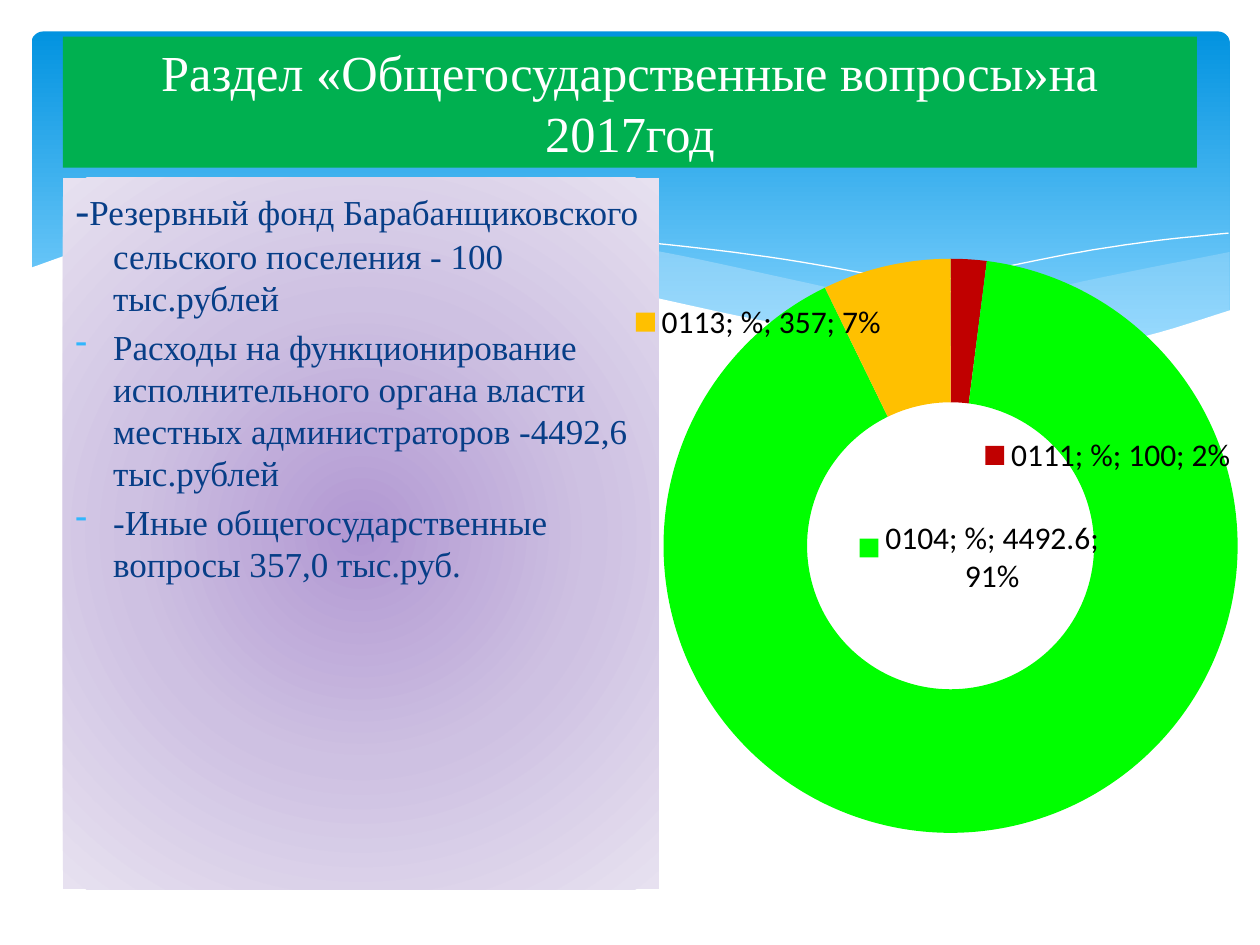
import pptx
import pptx.chart.data
import pptx.dml.color
import pptx.enum.chart
import pptx.enum.shapes
import pptx.enum.text
import pptx.oxml
import pptx.oxml.ns
import pptx.util
from pptx.util import Inches

COLORS = {
    "sky": "0293E0", "pale_sky": "83D3FE", "wave": "C6E7FC", "white": "FFFFFF",
    "purple": "B197D2", "lilac": "CEC1E2", "mist": "E7E1F0",
    "green": "00B050", "navy": "073E87", "bullet": "31B6FD", "black": "000000",
    "red": "C00000", "lime": "00FF00", "amber": "FFC000",
}
color = {name: pptx.dml.color.RGBColor.from_string(value) for name, value in COLORS.items()}
drawing_ns = pptx.oxml.ns.nsdecls("a")
chart_ns = pptx.oxml.ns.nsdecls("c")


def add_text(paragraph, text, size=20, fill="navy", font="Times New Roman"):
    run = paragraph.add_run()
    run.text = text
    run.font.size = pptx.util.Pt(size)
    run.font.name = font
    run.font.color.rgb = color[fill]


def smooth_curve(knots, steps=8):
    padded = [knots[0], *knots, knots[-1]]
    points = [knots[0]]
    for before, start, end, after in zip(padded, padded[1:], padded[2:], padded[3:]):
        for step in range(1, steps + 1):
            t = step / steps
            points.append(tuple(
                0.5 * (2 * b + (c - a) * t + (2 * a - 5 * b + 4 * c - d) * t ** 2
                       + (3 * b - a - 3 * c + d) * t ** 3)
                for a, b, c, d in zip(before, start, end, after)))
    return points


presentation = pptx.Presentation()
presentation.slide_width = Inches(10)
presentation.slide_height = Inches(7.5)
slide = presentation.slides.add_slide(presentation.slide_layouts[6])
shape_type = pptx.enum.shapes.MSO_SHAPE

header = slide.shapes.add_shape(
    shape_type.ROUNDED_RECTANGLE, Inches(0.25), Inches(0.25), Inches(9.51), Inches(2.7))
header.adjustments[0] = 0.034

right_wave = (
    smooth_curve([(9.76, 2), (8.61, 2.23), (7.53, 2.48), (6.61, 2.65)])
    + smooth_curve([(6.61, 2.65), (7.32, 2.74), (8.14, 2.78), (8.97, 2.7), (9.76, 2.47)]))
middle_wave = (
    smooth_curve([(8.93, 2.73), (7.75, 2.54), (6.29, 2.22), (5.14, 1.98), (4.2, 1.87),
                  (3.61, 1.85), (2.86, 1.91)])
    + smooth_curve([(2.86, 1.91), (3.62, 2.03), (4.49, 2.22), (5.66, 2.48), (6.65, 2.66),
                    (7.61, 2.77), (8.28, 2.78), (8.93, 2.73)]))
long_line = smooth_curve([(3.09, 1.95), (3.74, 1.88), (4.5, 1.88), (5.56, 1.97),
                          (6.65, 2.13), (7.95, 2.41), (9.07, 2.72)])
short_line = smooth_curve([(6.13, 2.57), (7.2, 2.29), (8.36, 2.04), (9.1, 1.92), (9.75, 1.85)])
white_wave = (
    smooth_curve([(0.23, 2.13), (0.95, 1.91), (1.93, 1.84), (2.92, 1.9), (4.47, 2.2),
                  (6.03, 2.54), (7.26, 2.72), (8.23, 2.77), (8.99, 2.69), (9.77, 2.46)])
    + [(9.77, 3.29), (0.23, 3.29)])

units_per_inch = 1000
for points, fill, opacity in [
        (right_wave, "wave", 29), (middle_wave, "wave", 40),
        (long_line, None, 100), (short_line, None, 100), (white_wave, "white", 100)]:
    scaled = [(round(x * units_per_inch), round(y * units_per_inch)) for x, y in points]
    builder = slide.shapes.build_freeform(*scaled[0], scale=Inches(1) / units_per_inch)
    builder.add_line_segments(scaled[1:], close=fill is not None)
    wave = builder.convert_to_shape()
    wave.shadow.inherit = False
    if fill is None:
        wave.fill.background()
        wave.line.color.rgb = color["white"]
        wave.line.width = pptx.util.Pt(0)
    else:
        wave.line.fill.background()
        wave.fill.solid()
        wave.fill.fore_color.rgb = color[fill]
        wave_color = wave._element.spPr.find(".//" + pptx.oxml.ns.qn("a:srgbClr"))
        wave_color.append(pptx.oxml.parse_xml(f'<a:alpha {drawing_ns} val="{opacity * 1000}"/>'))

body = slide.shapes.add_shape(
    shape_type.RECTANGLE, Inches(0.5), Inches(1.41), Inches(4.73), Inches(5.65))
title = slide.shapes.add_shape(
    shape_type.RECTANGLE, Inches(0.5), Inches(0.29), Inches(9), Inches(1.04))
for panel in (header, body, title):
    panel.shadow.inherit = False
    panel.line.fill.background()
    panel.text_frame.word_wrap = True

downward = '<a:lin ang="5400000" scaled="0"/>'
from_center = '<a:path path="circle"><a:fillToRect l="50000" t="50000" r="50000" b="50000"/></a:path>'
for panel, stops, direction in [
        (header, {"sky": 0, "pale_sky": 90}, downward),
        (body, {"purple": 0, "lilac": 50, "mist": 100}, from_center)]:
    panel.fill.gradient()
    gradient = panel._element.spPr.find(pptx.oxml.ns.qn("a:gradFill"))
    stop_xml = "".join(
        f'<a:gs pos="{position * 1000}"><a:srgbClr val="{COLORS[name]}"/></a:gs>'
        for name, position in stops.items())
    gradient.getparent().replace(gradient, pptx.oxml.parse_xml(
        f'<a:gradFill {drawing_ns} rotWithShape="1"><a:gsLst>{stop_xml}</a:gsLst>{direction}</a:gradFill>'))

title.fill.solid()
title.fill.fore_color.rgb = color["green"]
title.text_frame.vertical_anchor = pptx.enum.text.MSO_ANCHOR.MIDDLE
title.text_frame.paragraphs[0].alignment = pptx.enum.text.PP_ALIGN.CENTER
add_text(title.text_frame.paragraphs[0], "Раздел «Общегосударственные вопросы»на 2017год",
         size=28.8, fill="white")

body.text_frame.vertical_anchor = pptx.enum.text.MSO_ANCHOR.TOP
hanging_indent = Inches(0.3)
expenses = [
    "Резервный фонд Барабанщиковского сельского поселения - 100 тыс.рублей",
    "Расходы на функционирование исполнительного органа власти местных администраторов -4492,6 тыс.рублей",
    "-Иные общегосударственные вопросы 357,0 тыс.руб.",
]
for index, expense in enumerate(expenses):
    paragraph = body.text_frame.add_paragraph() if index else body.text_frame.paragraphs[0]
    paragraph.alignment = pptx.enum.text.PP_ALIGN.LEFT
    paragraph.space_before = pptx.util.Pt(4)
    properties = paragraph._p.get_or_add_pPr()
    properties.set("marL", str(hanging_indent))
    properties.set("indent", str(-hanging_indent))
    if index:
        properties.append(pptx.oxml.parse_xml(
            f'<a:buClr {drawing_ns}><a:srgbClr val="{COLORS["bullet"]}"/></a:buClr>'))
        properties.append(pptx.oxml.parse_xml(f'<a:buChar {drawing_ns} char="-"/>'))
    else:
        add_text(paragraph, "-", size=24)
    add_text(paragraph, expense)

sectors = [
    ("0111", 100, "red", (0.23, 0.18)),
    ("0104", 4492.6, "lime", (-0.01, -0.29)),
    ("0113", 357, "amber", (-0.23, -0.02)),
]
chart_data = pptx.chart.data.CategoryChartData()
chart_data.categories = [code for code, *_ in sectors]
chart_data.add_series("%", [amount for _, amount, *_ in sectors])
chart = slide.shapes.add_chart(
    pptx.enum.chart.XL_CHART_TYPE.DOUGHNUT,
    Inches(5.04), Inches(1.56), Inches(4.96), Inches(5.49), chart_data).chart
chart.has_legend = False
chart.has_title = False
chart.font.size = pptx.util.Pt(18)
chart.font.name = "Calibri"
chart.font.color.rgb = color["black"]
plot = chart.plots[0]
plot.vary_by_categories = True
plot._element.find(pptx.oxml.ns.qn("c:holeSize")).set("val", "50")

series = plot.series[0]
labels = series.data_labels
labels.show_legend_key = True
labels.show_value = True
labels.show_category_name = True
labels.show_series_name = True
labels.show_percentage = True
label_parts = "".join(
    f'<c:show{part} val="1"/>' for part in ["LegendKey", "Val", "CatName", "SerName", "Percent"])
for index, (code, amount, fill, (shift_x, shift_y)) in enumerate(sectors):
    sector_fill = series.points[index].format.fill
    sector_fill.solid()
    sector_fill.fore_color.rgb = color[fill]
    labels._element.insert(index, pptx.oxml.parse_xml(
        f'<c:dLbl {chart_ns}><c:idx val="{index}"/><c:layout><c:manualLayout>'
        f'<c:x val="{shift_x}"/><c:y val="{shift_y}"/></c:manualLayout></c:layout>{label_parts}'
        '<c:showBubbleSize val="0"/><c:separator>; </c:separator></c:dLbl>'))

plot_area = plot._element.getparent()
for layout in plot_area.findall(pptx.oxml.ns.qn("c:layout")):
    plot_area.remove(layout)
plot_area.insert(0, pptx.oxml.parse_xml(
    f'<c:layout {chart_ns}><c:manualLayout><c:layoutTarget val="inner"/>'
    '<c:xMode val="edge"/><c:yMode val="edge"/><c:x val="0.01"/><c:y val="0.09"/>'
    '<c:w val="0.99"/><c:h val="0.83"/></c:manualLayout></c:layout>'))

presentation.save("out.pptx")
